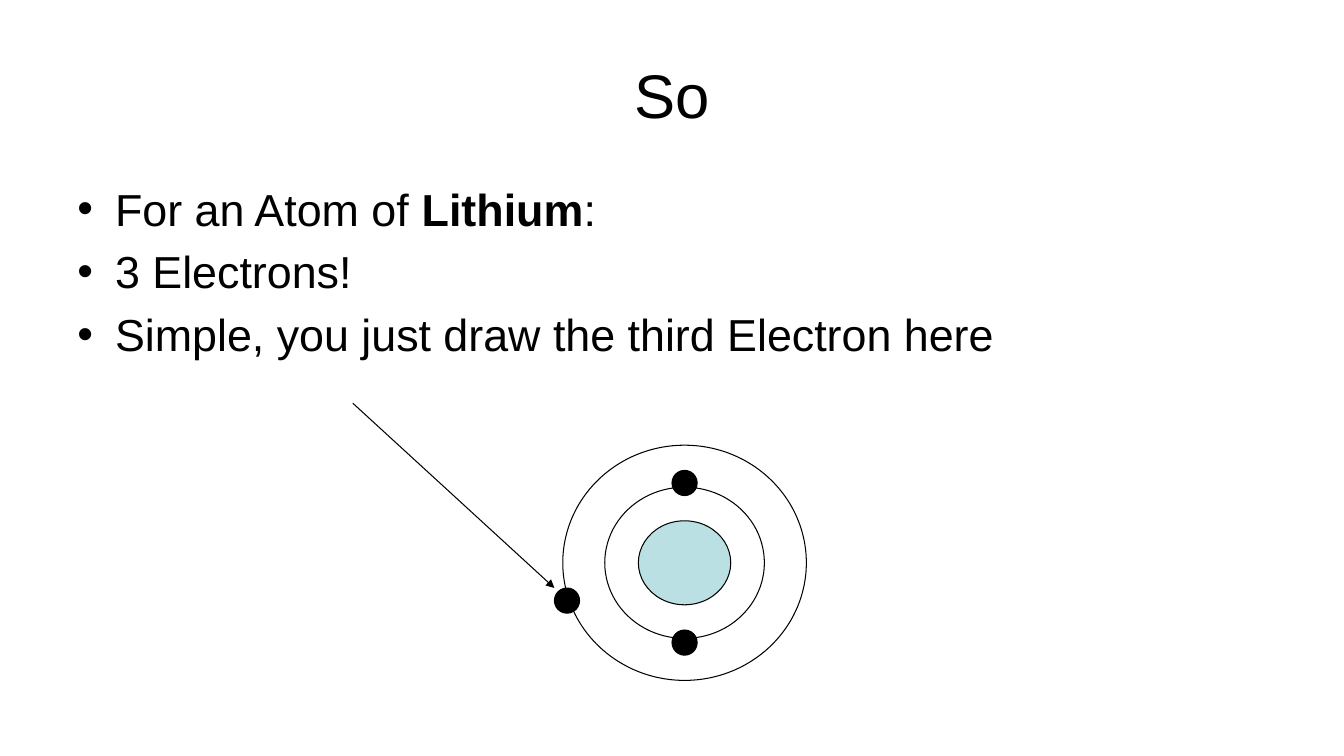
from lxml.etree import SubElement
from pptx import Presentation
from pptx.dml.color import RGBColor
from pptx.enum.shapes import MSO_CONNECTOR, MSO_SHAPE
from pptx.enum.text import MSO_ANCHOR, MSO_AUTO_SIZE, PP_ALIGN
from pptx.oxml.ns import qn
from pptx.util import Emu, Pt

THEME = {
    "font": "Arial",
    "ink": RGBColor(0x00, 0x00, 0x00),
    "paper": RGBColor(0xFF, 0xFF, 0xFF),
    "nucleus": RGBColor(0xBB, 0xE0, 0xE3),
    "title": Pt(44),
    "body": Pt(32),
    "line": Pt(0.75),
}


def px(n):
    return Emu(n * 9525)


def fill_text(sp, box, paragraphs, size, **frame):
    sp.left, sp.top, sp.width, sp.height = map(px, box)
    tf = sp.text_frame
    for key, value in {"word_wrap": True, "auto_size": MSO_AUTO_SIZE.NONE, **frame}.items():
        setattr(tf, key, value)
    for i, runs in enumerate(paragraphs):
        p = tf.add_paragraph() if i else tf.paragraphs[0]
        for text, bold in runs:
            r = p.add_run()
            r.text = text
            for key, value in {"name": THEME["font"], "size": size, "bold": bold}.items():
                setattr(r.font, key, value)
            r.font.color.rgb = THEME["ink"]


prs = Presentation()
prs.slide_width, prs.slide_height = px(1280), px(720)
s = prs.slides.add_slide(prs.slide_layouts[1])
s.background.fill.solid()
s.background.fill.fore_color.rgb = THEME["paper"]

title, body = s.placeholders
fill_text(title, (64, 29, 1152, 120), [[("So", False)]], THEME["title"],
          vertical_anchor=MSO_ANCHOR.MIDDLE)
title.text_frame.paragraphs[0].alignment = PP_ALIGN.CENTER
fill_text(body, (64, 168, 1152, 475), [
    [("For an Atom of ", False), ("Lithium", True), (":", False)],
    [("3 Electrons!", False)],
    [("Simple, you just draw the third Electron here", False)],
], THEME["body"], vertical_anchor=MSO_ANCHOR.TOP)

cx, cy = 652, 536
electron = (24, 24, "ink")
atom = [
    (0, 0, 88, 80, "nucleus"),
    (0, 0, 152, 144, None),
    (0, -76, *electron),
    (0, 76, *electron),
    (0, 0, 232, 224, None),
    (-112, 36, *electron),
]
for dx, dy, w, h, fill in atom:
    sp = s.shapes.add_shape(MSO_SHAPE.OVAL, px(cx + dx - w // 2), px(cy + dy - h // 2), px(w), px(h))
    sp.shadow.inherit = False
    if fill:
        sp.fill.solid()
        sp.fill.fore_color.rgb = THEME[fill]
    else:
        sp.fill.background()
    sp.line.color.rgb = THEME["ink"]
    sp.line.width = THEME["line"]

arrow = s.shapes.add_connector(MSO_CONNECTOR.STRAIGHT, px(336), px(384), px(528), px(560))
arrow.line.color.rgb = THEME["ink"]
arrow.line.width = THEME["line"]
SubElement(arrow.line._get_or_add_ln(), qn("a:tailEnd"), type="triangle")
SubElement(arrow._element.spPr, qn("a:effectLst"))

prs.save("out.pptx")
